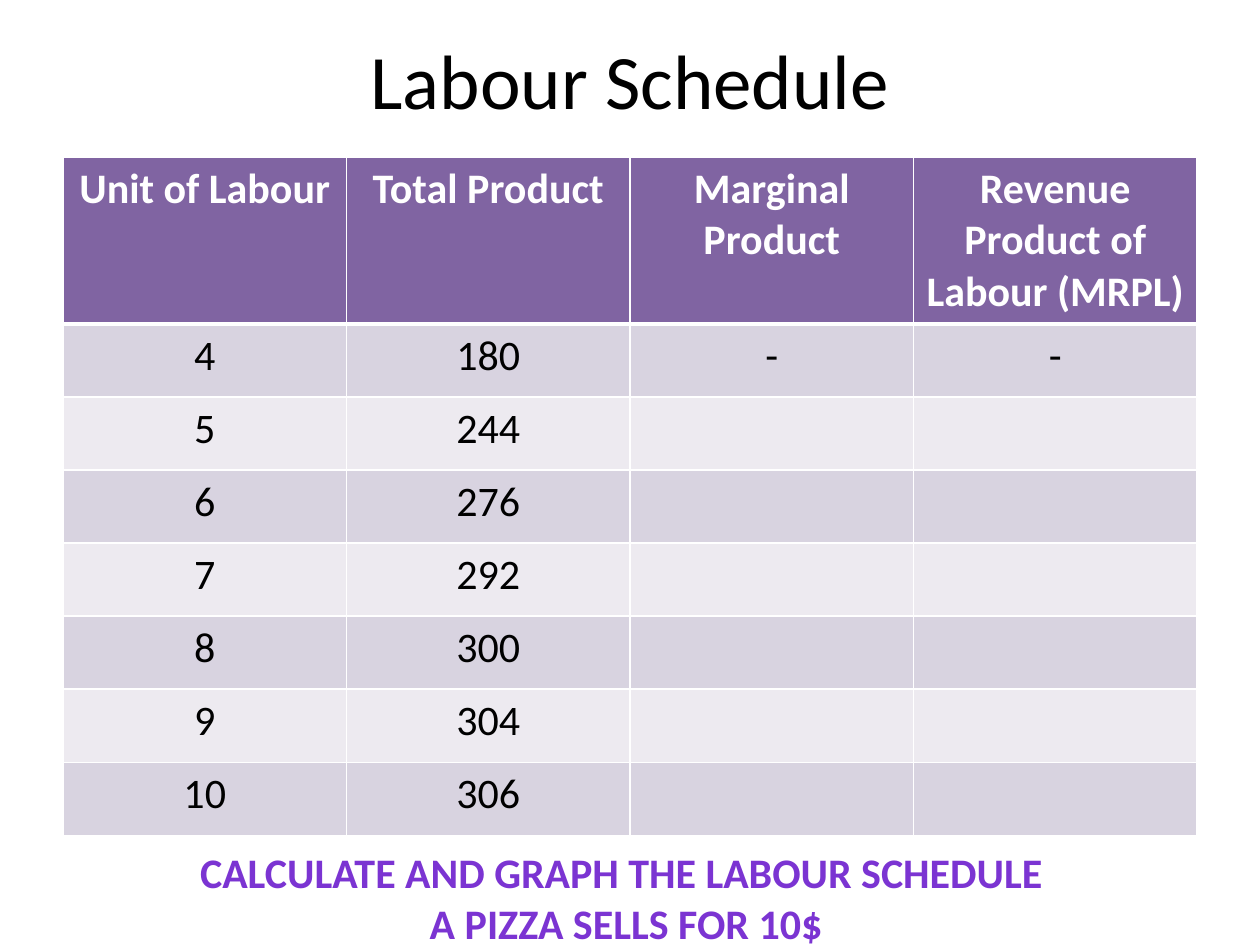
from lxml.etree import SubElement
from pptx import Presentation
from pptx.dml.color import RGBColor
from pptx.enum.text import MSO_ANCHOR, PP_ALIGN
from pptx.oxml.ns import qn
from pptx.util import Pt

PX = 9144


def style(tf, size, color, bold=False):
    for p in tf.paragraphs:
        p.alignment = PP_ALIGN.CENTER
        for r in p.runs:
            r.font.name = "Calibri"
            r.font.size = Pt(size)
            r.font.bold = bold
            r.font.color.rgb = RGBColor.from_string(color)


def border(cell, side, width, color):
    ln = SubElement(cell._tc.get_or_add_tcPr(), qn(f"a:{side}"), w=str(Pt(width)))
    fill = SubElement(ln, qn("a:solidFill"))
    SubElement(fill, qn("a:srgbClr"), val=color)


prs = Presentation()
prs.slide_width, prs.slide_height = 1000 * PX, 750 * PX
s = prs.slides.add_slide(prs.slide_layouts[5])

title = s.shapes.title
title.left, title.top, title.width, title.height = 50 * PX, 0, 900 * PX, 125 * PX
tf = title.text_frame
tf.text = "Labour Schedule"
tf.vertical_anchor = MSO_ANCHOR.MIDDLE
style(tf, 44, "000000")

rows = [
    ("Unit of Labour", "Total Product", "Marginal Product", "Revenue Product of Labour (MRPL)"),
    ("4", "180", "-", "-"),
    ("5", "244", "", ""),
    ("6", "276", "", ""),
    ("7", "292", "", ""),
    ("8", "300", "", ""),
    ("9", "304", "", ""),
    ("10", "306", "", ""),
]
table = s.shapes.add_table(len(rows), 4, 50 * PX, 125 * PX, 900 * PX, 506 * PX).table
for i, row in enumerate(rows):
    header = i == 0
    table.rows[i].height = (100 if header else 58) * PX
    for j, text in enumerate(row):
        cell = table.cell(i, j)
        cell.text = text
        style(cell.text_frame, 24, "FFFFFF" if header else "000000", header)
        for side in ("lnL", "lnR", "lnT", "lnB"):
            thick = (header and side == "lnB") or (i == 1 and side == "lnT")
            border(cell, side, 3 if thick else 1, "FFFFFF")
        cell.fill.solid()
        color = "8064A2" if header else ("EDEAF0", "D8D3E0")[i % 2]
        cell.fill.fore_color.rgb = RGBColor.from_string(color)

sp = s.shapes.add_textbox(22 * PX, 667 * PX, 950 * PX, 91 * PX)
tf = sp.text_frame
tf.word_wrap = True
tf.text = "CALCULATE AND GRAPH THE LABOUR SCHEDULE \nA PIZZA SELLS FOR 10$"
style(tf, 24, "7B34D2", True)

prs.save("out.pptx")
